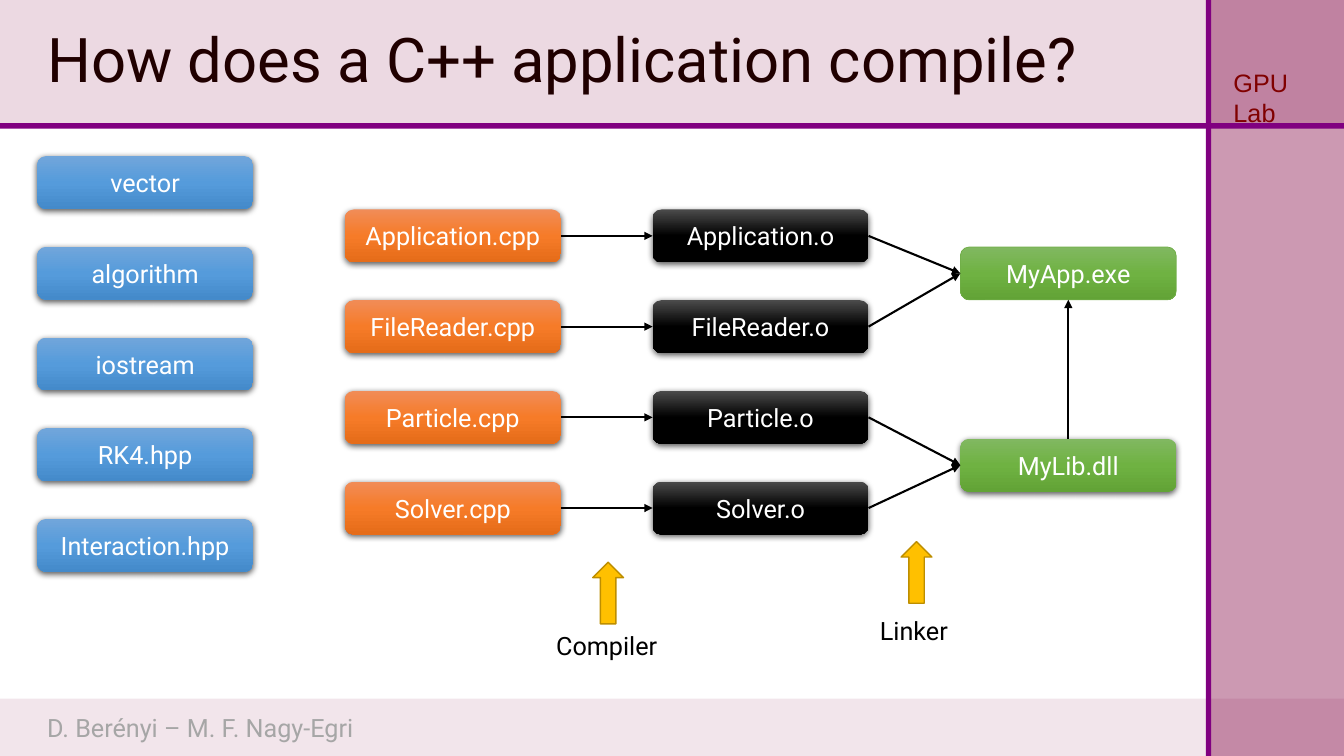
from copy import deepcopy

from lxml.etree import SubElement
from pptx import Presentation
from pptx.dml.color import RGBColor
from pptx.enum.shapes import MSO_CONNECTOR as CONNECTOR, MSO_SHAPE as SHAPE
from pptx.enum.text import MSO_ANCHOR as ANCHOR, PP_ALIGN as ALIGN
from pptx.oxml.ns import qn
from pptx.util import Pt

WINE = RGBColor(0x80, 0x00, 0x40)
PURPLE = RGBColor(0x80, 0x00, 0x80)
MAROON = RGBColor(0x80, 0x00, 0x00)
DARK_RED = RGBColor(0x20, 0x00, 0x00)
GRAY = RGBColor(0xA6, 0xA6, 0xA6)
BLACK = RGBColor(0x00, 0x00, 0x00)
WHITE = RGBColor(0xFF, 0xFF, 0xFF)
GOLD = RGBColor(0xFF, 0xC0, 0x00)
DARK_GOLD = RGBColor(0xBD, 0x8E, 0x00)
LEAF = RGBColor(0x70, 0xAD, 0x47)
BLUES = [RGBColor(0x71, 0xA6, 0xDB), RGBColor(0x55, 0x9B, 0xDB), RGBColor(0x44, 0x8A, 0xCA)]
ORANGES = [RGBColor(0xF1, 0x8C, 0x57), RGBColor(0xF6, 0x7B, 0x28), RGBColor(0xE5, 0x6C, 0x19)]
BLACKS = [RGBColor(0x4B, 0x4B, 0x4B), BLACK, BLACK]
GREENS = [RGBColor(0x81, 0xB8, 0x61), RGBColor(0x6F, 0xB2, 0x42), RGBColor(0x62, 0xA3, 0x36)]

SLIDE_WIDTH, SLIDE_HEIGHT = 960, 540
BOX_WIDTH, BOX_HEIGHT = 154.2, 37.8
LEFT, COLUMN_STEP, ROW_STEP = 26.6, 219.8, 64.8
HEADER_TOP, SOURCE_TOP = 111.5, 149.6


def add_text(frame, text, size, color, font="Roboto"):
    frame.word_wrap = True
    run = frame.paragraphs[0].add_run()
    run.text = text
    run.font.size = Pt(size)
    run.font.name = font
    run.font.color.rgb = color


def add_plain(kind, left, top, width, height, color):
    shape = slide.shapes.add_shape(kind, Pt(left), Pt(top), Pt(width), Pt(height))
    shape.shadow.inherit = False
    shape.fill.solid()
    shape.fill.fore_color.rgb = color
    shape.line.fill.background()
    return shape


presentation = Presentation()
presentation.slide_width = Pt(SLIDE_WIDTH)
presentation.slide_height = Pt(SLIDE_HEIGHT)
slide = presentation.slides.add_slide(presentation.slide_layouts[5])

for left, top, width, height, color, opacity in [
    (0, 499, SLIDE_WIDTH, 41.5, WINE, 10),
    (864.8, 0, 95.2, SLIDE_HEIGHT, WINE, 40),
    (0, 0, SLIDE_WIDTH, 88, WINE, 15),
    (0, 88, SLIDE_WIDTH, 4, PURPLE, 100),
    (861.3, 0, 3.8, SLIDE_HEIGHT, PURPLE, 100),
]:
    band = add_plain(SHAPE.RECTANGLE, left, top, width, height, color)
    if opacity < 100:
        tint = band.fill._xPr.find(".//" + qn("a:srgbClr"))
        SubElement(tint, qn("a:alpha")).set("val", str(opacity * 1000))

title = slide.shapes.title
title.left, title.top, title.width, title.height = Pt(LEFT), Pt(15), Pt(825), Pt(59)
title.text_frame.vertical_anchor = ANCHOR.MIDDLE
title.text_frame.paragraphs[0].alignment = ALIGN.LEFT
title.text_frame.paragraphs[0].line_spacing = 0.9
add_text(title.text_frame, "How does a C++ application compile?", 44, DARK_RED)
slide.shapes._spTree.append(title._element)

for text, left, top, width, color, font in [
    ("GPU Lab", 874, 44.6, 86, MAROON, "Arial"),
    ("D. Berényi – M. F. Nagy-Egri", LEFT, 505.4, 249, GRAY, "Roboto"),
    ("Compiler", 390.2, 446.4, 88, BLACK, "Roboto"),
    ("Linker", 621.4, 435.6, 67, BLACK, "Roboto"),
]:
    label = slide.shapes.add_textbox(Pt(left), Pt(top), Pt(width), Pt(29))
    add_text(label.text_frame, text, 18, color, font)

columns = [
    (BLUES, HEADER_TOP, ROW_STEP, ["vector", "algorithm", "iostream", "RK4.hpp", "Interaction.hpp"]),
    (ORANGES, SOURCE_TOP, ROW_STEP,
     ["Application.cpp", "FileReader.cpp", "Particle.cpp", "Solver.cpp"]),
    (BLACKS, SOURCE_TOP, ROW_STEP, ["Application.o", "FileReader.o", "Particle.o", "Solver.o"]),
    (GREENS, 176.4, 137, ["MyApp.exe", "MyLib.dll"]),
]
boxes = {}
for column, (shades, top, step, names) in enumerate(columns):
    for row, name in enumerate(names):
        box = add_plain(SHAPE.ROUNDED_RECTANGLE, LEFT + column * COLUMN_STEP, top + row * step,
                        BOX_WIDTH, BOX_HEIGHT, shades[1])
        box.fill.gradient()
        box.fill.gradient_angle = 270
        stop_list = box.fill._xPr.find(".//" + qn("a:gsLst"))
        stop_list.append(deepcopy(stop_list[-1]))
        for stop, position, shade in zip(box.fill.gradient_stops, (0, 0.5, 1), shades):
            stop.position = position
            stop.color.rgb = shade
        if name == "MyApp.exe":
            box.line.color.rgb = LEAF
            box.line.width = Pt(0.5)
        else:
            effects = box._element.spPr.find(qn("a:effectLst"))
            shadow = SubElement(effects, qn("a:outerShdw"), blurRad=str(Pt(4.5)),
                                dist=str(Pt(1.5)), dir="5400000", algn="ctr", rotWithShape="0")
            shadow_color = SubElement(shadow, qn("a:srgbClr"), val=str(BLACK))
            SubElement(shadow_color, qn("a:alpha"), val="63000")
        box.text_frame.vertical_anchor = ANCHOR.MIDDLE
        box.text_frame.paragraphs[0].alignment = ALIGN.CENTER
        add_text(box.text_frame, name, 18, WHITE)
        boxes[name] = box

for left, top in [(423.4, 401.6), (643.7, 386.9)]:
    arrow = add_plain(SHAPE.UP_ARROW, left, top, 22, 44, GOLD)
    arrow.line.color.rgb = DARK_GOLD
    arrow.line.width = Pt(1)

sources, objects = columns[1][3], columns[2][3]
targets = ["MyApp.exe", "MyApp.exe", "MyLib.dll", "MyLib.dll"]
links = [(start, 3, end, 1) for start, end in zip(sources + objects, objects + targets)]
links.append(("MyLib.dll", 0, "MyApp.exe", 2))
for start, start_side, end, end_side in links:
    link = slide.shapes.add_connector(CONNECTOR.STRAIGHT, 0, 0, 0, 0)
    link.begin_connect(boxes[start], start_side)
    link.end_connect(boxes[end], end_side)
    link.line.color.rgb = BLACK
    link.line.width = Pt(1.5)
    SubElement(link.line._get_or_add_ln(), qn("a:tailEnd"), type="triangle")
    SubElement(link._element.spPr, qn("a:effectLst"))

presentation.save("out.pptx")
